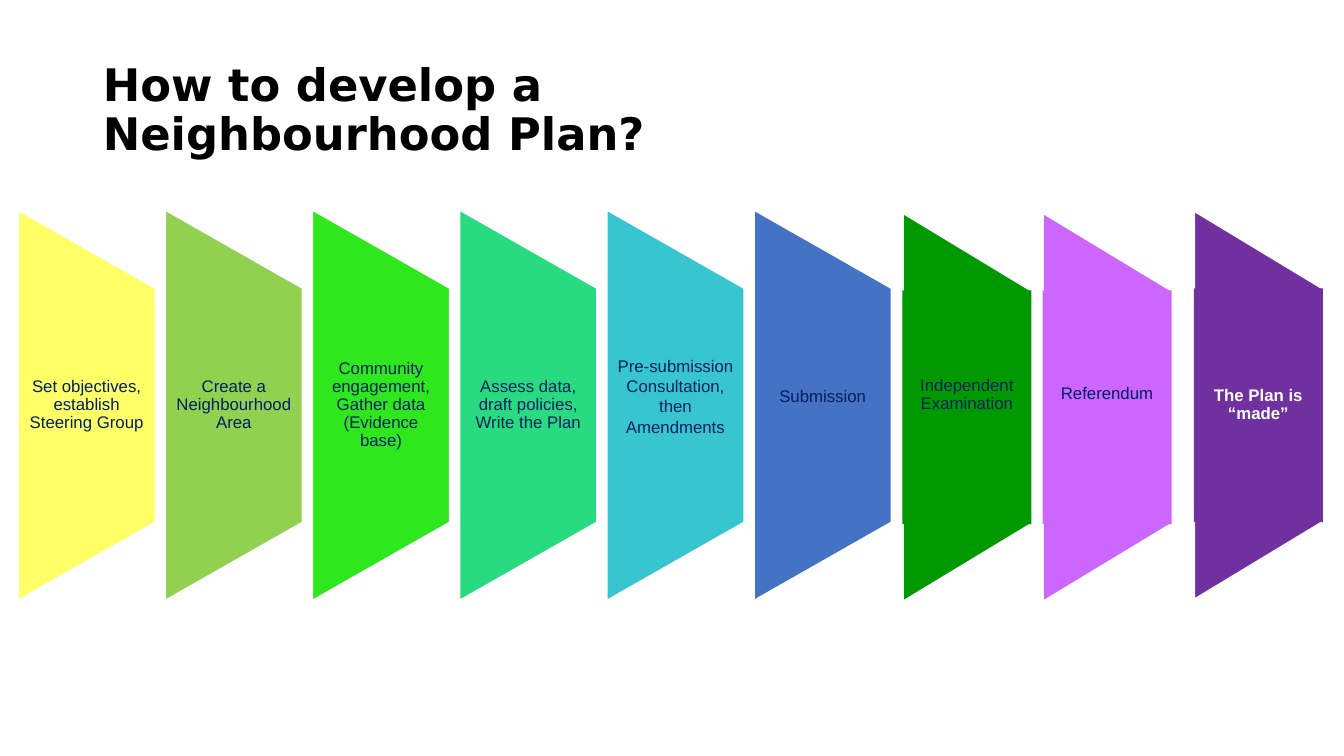
from pptx import Presentation
from pptx.dml.color import RGBColor
from pptx.enum.shapes import MSO_SHAPE
from pptx.enum.text import MSO_ANCHOR, MSO_AUTO_SIZE, PP_ALIGN
from pptx.util import Inches, Pt

TRAPEZOID = MSO_SHAPE.FLOWCHART_MANUAL_OPERATION
RECTANGLE = MSO_SHAPE.RECTANGLE
MIDDLE = MSO_ANCHOR.MIDDLE
CENTER = PP_ALIGN.CENTER
LEFT = PP_ALIGN.LEFT
NO_AUTOFIT = MSO_AUTO_SIZE.NONE

NAVY, WHITE, BLACK = "002060", "FFFFFF", "000000"
PANEL_HEIGHT, LABEL_HEIGHT = 3.87, 2.32
STAGE_LEFT, STAGE_STEP, STAGE_WIDTH, STAGE_MIDDLE = 0.18, 1.46, 1.36, 4.02
FINAL_WIDTH = 1.28

EARLY_STAGES = [
    ("Set objectives, establish Steering Group", "FFFF66", 0.9, 0),
    ("Create a Neighbourhood Area", "92D050", 0.9, 0),
    ("Community engagement, Gather data (Evidence base)", "2EE71C", 0.9, 0),
    ("Assess data, draft policies, Write the Plan", "29DB80", 0.9, 0),
    ("Pre-submission Consultation, then Amendments", "37C6CF", 1, 0.18),
    ("Submission", "4472C4", 1, 0.18),
]
FINAL_STAGES = [
    ("Independent Examination", "009900", 8.95, 4.04, 0.24, NAVY, False),
    ("Referendum", "CC66FF", 10.34, 4.04, 0.26, NAVY, False),
    ("The Plan is “made”", "7030A0", 11.84, 4.02, 0, WHITE, True),
]


def rgb(value):
    return RGBColor.from_string(value)


class PlanSlide:
    """Hold the style and the current slide, and draw its elements."""

    def __init__(self, deck):
        self.slide = deck.slides.add_slide(deck.slide_layouts[5])
        self.label_font, self.title_font = "Arial", "DejaVu Sans"

    def set_text(self, frame, wording, font, size, color, bold, align, spacing):
        frame.word_wrap = True
        frame.auto_size = NO_AUTOFIT
        frame.vertical_anchor = MIDDLE
        frame.text = wording
        paragraph = frame.paragraphs[0]
        paragraph.alignment = align
        paragraph.line_spacing = spacing
        paragraph.font.name = font
        paragraph.font.size = Pt(size)
        paragraph.font.bold = bold
        paragraph.font.color.rgb = rgb(color)

    def title(self, wording):
        heading = self.slide.shapes.title
        heading.left, heading.top = Inches(0.92), Inches(0.4)
        heading.width, heading.height = Inches(7.42), Inches(1.41)
        self.set_text(heading.text_frame, wording, self.title_font, 32, BLACK,
                      True, LEFT, 0.9)

    def group(self):
        return self.slide.shapes.add_group_shape().shapes

    def panel(self, group, left, middle, width, fill, edge):
        panel = group.add_shape(
            TRAPEZOID, Inches(left + (width - PANEL_HEIGHT) / 2),
            Inches(middle - width / 2), Inches(PANEL_HEIGHT), Inches(width))
        panel.rotation = 270
        panel.shadow.inherit = False
        panel.fill.solid()
        panel.fill.fore_color.rgb = rgb(fill)
        panel.line.color.rgb = rgb(WHITE)
        panel.line.width = Pt(edge)

    def label(self, group, wording, left, middle, width, lift, side,
              color=NAVY, bold=False, spacing=0.9, fill=None):
        place = (Inches(left), Inches(middle - LABEL_HEIGHT / 2),
                 Inches(width), Inches(LABEL_HEIGHT))
        if fill:
            label = group.add_shape(RECTANGLE, *place)
            label.shadow.inherit = False
            label.fill.solid()
            label.fill.fore_color.rgb = rgb(fill)
            label.line.fill.background()
        else:
            label = group.add_textbox(*place)
        frame = label.text_frame
        frame.margin_left = frame.margin_right = Inches(side)
        frame.margin_top, frame.margin_bottom = 0, Inches(lift)
        self.set_text(frame, wording, self.label_font, 12, color, bold, CENTER,
                      spacing)


def main():
    deck = Presentation()
    deck.slide_width, deck.slide_height = Inches(13.33), Inches(7.5)
    plan = PlanSlide(deck)
    plan.title("How to develop a Neighbourhood Plan?")

    early = plan.group()
    for index, (wording, fill, spacing, lift) in enumerate(EARLY_STAGES):
        left = STAGE_LEFT + index * STAGE_STEP
        plan.panel(early, left, STAGE_MIDDLE, STAGE_WIDTH, fill, 1)
        plan.label(early, wording, left, STAGE_MIDDLE, STAGE_WIDTH, lift, 0.08,
                   spacing=spacing)

    for wording, fill, left, middle, lift, color, bold in FINAL_STAGES:
        final = plan.group()
        plan.panel(final, left, middle, FINAL_WIDTH, fill, 2)
        plan.label(final, wording, left, middle, FINAL_WIDTH, lift, 0.1,
                   color, bold, fill=fill)

    deck.save("out.pptx")


if __name__ == "__main__":
    main()
